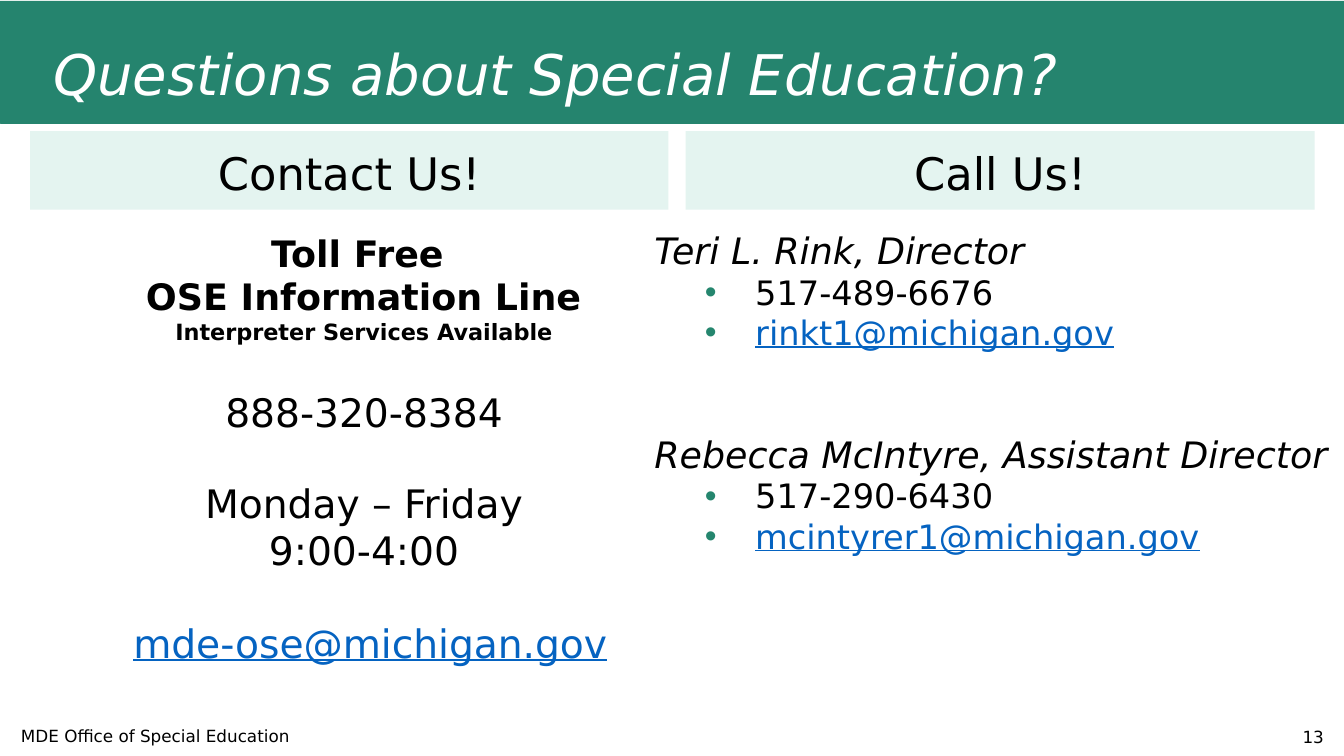
from dataclasses import dataclass

from lxml.etree import SubElement
from pptx import Presentation
from pptx.dml.color import RGBColor
from pptx.enum.shapes import MSO_SHAPE
from pptx.enum.text import MSO_ANCHOR, MSO_AUTO_SIZE, PP_ALIGN
from pptx.oxml.ns import qn
from pptx.util import Inches, Pt


@dataclass(frozen=True)
class Theme:
    """Colours, font and type sizes of the slide."""
    font: str = "DejaVu Sans"
    green: str = "25846E"
    bullet: str = "25866E"
    mint: str = "E4F4F0"
    white: str = "FFFFFF"
    black: str = "000000"
    link: str = "0563C1"
    title: int = 40
    heading: int = 32
    large: int = 28
    name: int = 26
    detail: int = 24
    note: int = 16
    footer: int = 12


THEME = Theme()


def place(sp, left, top, width, height):
    """Move and size a shape, with lengths in inches."""
    sp.left, sp.top = Inches(left), Inches(top)
    sp.width, sp.height = Inches(width), Inches(height)


def prepare(sp, anchor=MSO_ANCHOR.MIDDLE):
    """Set wrapping and anchoring, and return the text frame."""
    tf = sp.text_frame
    tf.word_wrap = True
    tf.auto_size = MSO_AUTO_SIZE.NONE
    tf.vertical_anchor = anchor
    return tf


def fill(sp, color):
    """Give a shape a solid fill."""
    sp.fill.solid()
    sp.fill.fore_color.rgb = RGBColor.from_string(color)


def add_run(p, text, size, color=THEME.black, bold=False, italic=False, underline=False):
    """Add one formatted run to a paragraph."""
    r = p.add_run()
    r.text = text
    font = r.font
    font.name, font.size = THEME.font, Pt(size)
    font.bold, font.italic, font.underline = bold, italic, underline
    font.color.rgb = RGBColor.from_string(color)


def add_link(p, text, size):
    """Add a run in the link style."""
    add_run(p, text, size, THEME.link, underline=True)


def add_paragraph(tf, align=PP_ALIGN.LEFT, before=0, spacing=1.0, bullet=False):
    """Use the empty first paragraph or add one, with or without a bullet."""
    first = tf.paragraphs[0]
    p = tf.add_paragraph() if first.runs else first
    pPr = p._p.get_or_add_pPr()
    pPr.set("marL", str(Inches(1) if bullet else 0))
    pPr.set("indent", str(Inches(-0.5) if bullet else 0))
    if bullet:
        SubElement(SubElement(pPr, qn("a:buClr")), qn("a:srgbClr"), val=THEME.bullet)
        SubElement(pPr, qn("a:buFont"), typeface="Arial")
        SubElement(pPr, qn("a:buChar"), char="•")
        p.level = 1
    else:
        SubElement(pPr, qn("a:buNone"))
    p.alignment, p.line_spacing = align, spacing
    p.space_before, p.space_after = Pt(before), Pt(0)
    return p


def add_title(slide, text):
    """Fill the title and put the green band behind it."""
    title = slide.shapes.title
    place(title, 0.43, 0.31, 12.42, 0.91)
    p = add_paragraph(prepare(title), spacing=0.9)
    add_run(p, text, THEME.title, THEME.white, italic=True)
    band = slide.shapes.add_shape(MSO_SHAPE.RECTANGLE, 0, Inches(0.01), Inches(13.33), Inches(1.21))
    band.shadow.inherit = False
    fill(band, THEME.green)
    band.line.color.rgb = RGBColor.from_string(THEME.green)
    band.line.width = Pt(0.5)
    title._element.addprevious(band._element)


def add_heading(sp, left, width, text):
    """Format a column heading."""
    place(sp, left, 1.3, width, 0.78)
    fill(sp, THEME.mint)
    p = add_paragraph(prepare(sp), PP_ALIGN.CENTER, spacing=1.08)
    add_run(p, text, THEME.heading)


def add_information_line(sp):
    """Fill the left column with the information line details."""
    place(sp, 0.66, 2.24, 5.9, 4.7)
    tf = prepare(sp, MSO_ANCHOR.TOP)
    for text, size, bold, before in (
        ("Toll Free ", THEME.name, True, 0),
        ("OSE Information Line", THEME.name, True, 0),
        ("Interpreter Services Available", THEME.note, True, 0),
        ("888-320-8384", THEME.large, False, 31),
        ("Monday – Friday", THEME.large, False, 31),
        ("9:00-4:00", THEME.large, False, 0),
    ):
        add_run(add_paragraph(tf, PP_ALIGN.CENTER, before), text, size, bold=bold)
    p = add_paragraph(tf, PP_ALIGN.CENTER, 33)
    add_run(p, " ", THEME.large)
    add_link(p, "mde-ose@michigan.gov", THEME.large)


def add_contacts(sp, contacts):
    """Fill the right column with names, numbers and addresses."""
    place(sp, 6.39, 2.18, 7, 4.7)
    tf = prepare(sp, MSO_ANCHOR.TOP)
    for i, (name, phone, email) in enumerate(contacts):
        p = add_paragraph(tf, before=54 if i else 0, spacing=1.08)
        add_run(p, name, THEME.name, italic=True)
        add_run(add_paragraph(tf, bullet=True), phone, THEME.detail)
        add_link(add_paragraph(tf, bullet=True), email, THEME.detail)


def add_footer(slide, left, top, width, text, align):
    """Add a small text box at the foot of the slide."""
    sp = slide.shapes.add_textbox(Inches(left), Inches(top), Inches(width), Inches(0.4))
    add_run(add_paragraph(prepare(sp), align), text, THEME.footer)


def main():
    """Build the slide and save it."""
    prs = Presentation()
    prs.slide_width, prs.slide_height = Inches(13.33), Inches(7.5)
    slide = prs.slides.add_slide(prs.slide_layouts.get_by_name("Comparison"))
    body = slide.placeholders
    add_title(slide, "Questions about Special Education?")
    add_heading(body[1], 0.3, 6.33, "Contact Us!")
    add_information_line(body[2])
    add_heading(body[3], 6.8, 6.24, "Call Us!")
    add_contacts(body[4], (
        ("Teri L. Rink, Director", "517-489-6676", "rinkt1@michigan.gov"),
        ("Rebecca McIntyre, Assistant Director", "517-290-6430", "mcintyrer1@michigan.gov"),
    ))
    add_footer(slide, 0.11, 7.1, 4.5, "MDE Office of Special Education", PP_ALIGN.LEFT)
    add_footer(slide, 10.23, 7.11, 3, "13", PP_ALIGN.RIGHT)
    prs.save("out.pptx")


if __name__ == "__main__":
    main()
